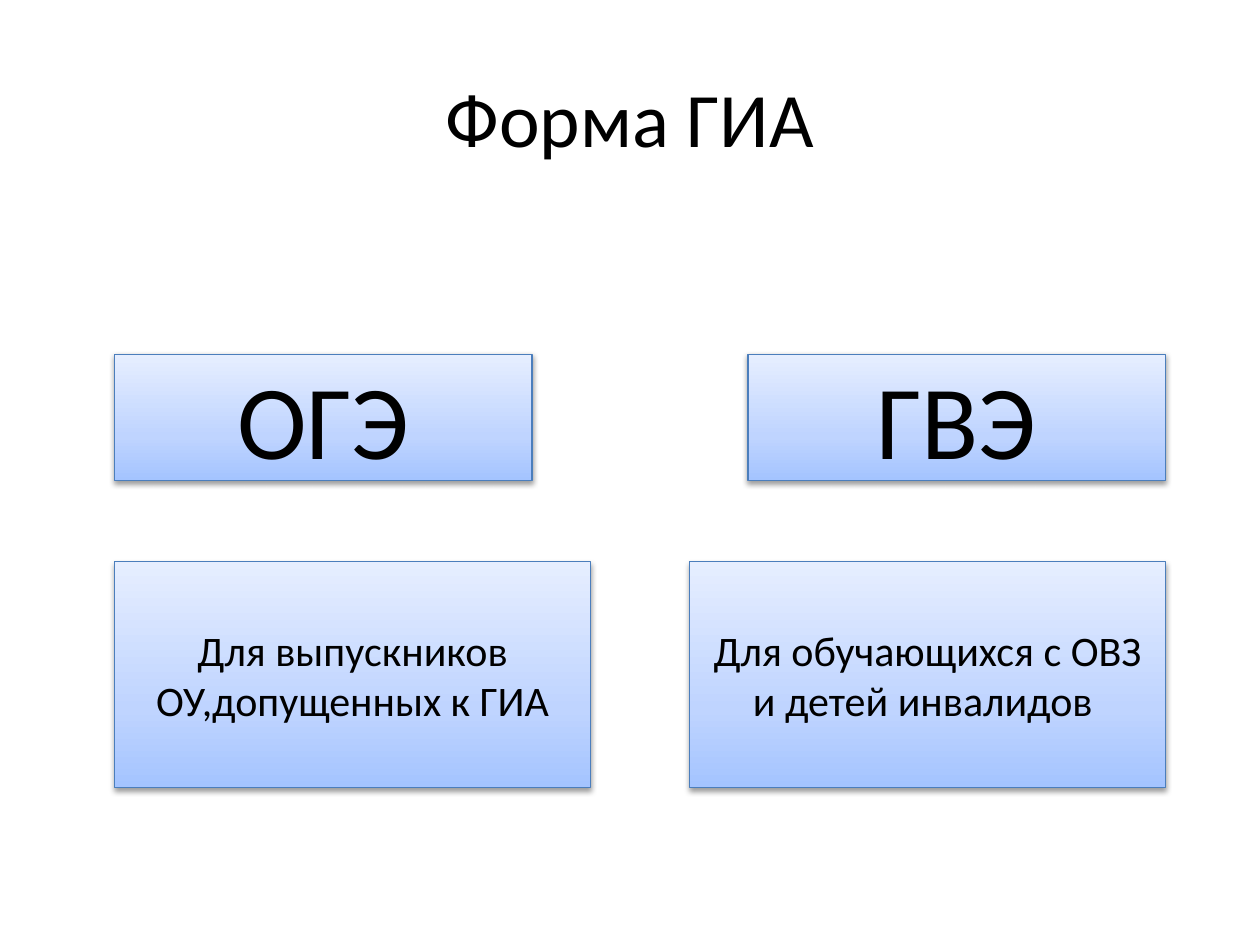
from lxml import etree
from pptx import Presentation
from pptx import util as u
from pptx.dml.color import RGBColor
from pptx.enum import shapes, text
from pptx.oxml import ns

BLACK = RGBColor(0x00, 0x00, 0x00)
OUTLINE = RGBColor(0x4B, 0x7E, 0xBC)
GRADIENT = (
    (0, RGBColor(0xA4, 0xC4, 0xFF)),
    (35, RGBColor(0xBF, 0xD4, 0xFF)),
    (100, RGBColor(0xE6, 0xEE, 0xFF)),
)
FONT = "Calibri"
LEFT, RIGHT = 65.5, 666
ROWS = (
    (202.5, 238.5, 72, 60, ("ОГЭ", "ГВЭ")),
    (321, 272, 129, 24, (
        "Для выпускников ОУ,допущенных к ГИА",
        "Для обучающихся с ОВЗ и детей инвалидов ",
    )),
)


def add_node(parent, tag, **attributes):
    """Append a DrawingML element with the given attributes."""
    values = {name: str(value) for name, value in attributes.items()}
    return etree.SubElement(parent, ns.qn(f"a:{tag}"), values)


def set_text(box, words, size):
    """Write centred black text in the middle of a box."""
    frame = box.text_frame
    frame.text = words
    frame.word_wrap = True
    frame.vertical_anchor = text.MSO_ANCHOR.MIDDLE
    para = frame.paragraphs[0]
    para.alignment = text.PP_ALIGN.CENTER
    for span in para.runs:
        span.font.name = FONT
        span.font.size = u.Pt(size)
        span.font.color.rgb = BLACK


def set_gradient(box):
    """Fill a box with blue that lightens towards the top."""
    box.fill.gradient()
    box.fill.gradient_angle = 90
    stops = box._element.spPr.find(f".//{ns.qn('a:gsLst')}")
    for stop in list(stops):
        stops.remove(stop)
    for position, color in GRADIENT:
        stop = add_node(stops, "gs", pos=position * 1000)
        add_node(stop, "srgbClr", val=color)


def set_shadow(box):
    """Give a box a soft shadow below it."""
    box.shadow.inherit = False
    effects = box._element.spPr.find(ns.qn("a:effectLst"))
    shadow = add_node(effects, "outerShdw", blurRad=u.Pt(3.15), dist=u.Pt(1.57),
                      dir=90 * 60000, rotWithShape=0)
    color = add_node(shadow, "srgbClr", val=BLACK)
    add_node(color, "alpha", val=38000)


def add_title(page, words):
    """Place and format the title placeholder."""
    title = page.shapes.title
    title.left, title.top = u.Pt(36), u.Pt(21.6)
    title.width, title.height = u.Pt(648), u.Pt(90)
    set_text(title, words, 44)


def add_panel(page, left, top, width, height, words, size):
    """Add a shaded rectangle with text."""
    box = page.shapes.add_shape(shapes.MSO_SHAPE.RECTANGLE, u.Pt(left),
                                u.Pt(top), u.Pt(width), u.Pt(height))
    set_gradient(box)
    box.line.color.rgb = OUTLINE
    box.line.width = u.Pt(0.75)
    set_shadow(box)
    set_text(box, words, size)


def main():
    """Build the slide and save the deck."""
    deck = Presentation()
    deck.slide_width, deck.slide_height = u.Pt(720), u.Pt(540)
    page = deck.slides.add_slide(deck.slide_layouts.get_by_name("Title Only"))
    add_title(page, "Форма ГИА")
    for top, width, height, size, labels in ROWS:
        for left, words in zip((LEFT, RIGHT - width), labels):
            add_panel(page, left, top, width, height, words, size)
    deck.save("out.pptx")


if __name__ == "__main__":
    main()
